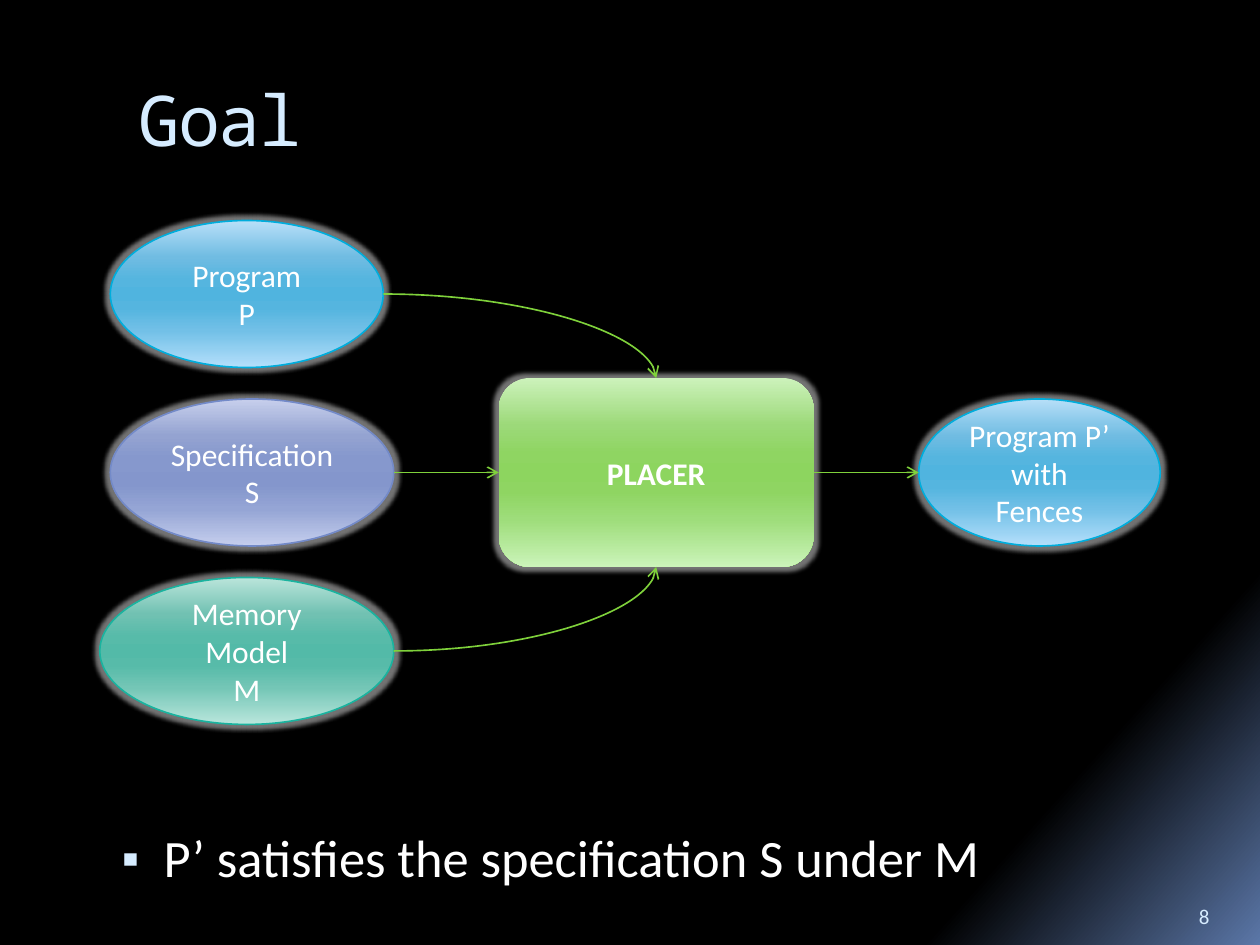
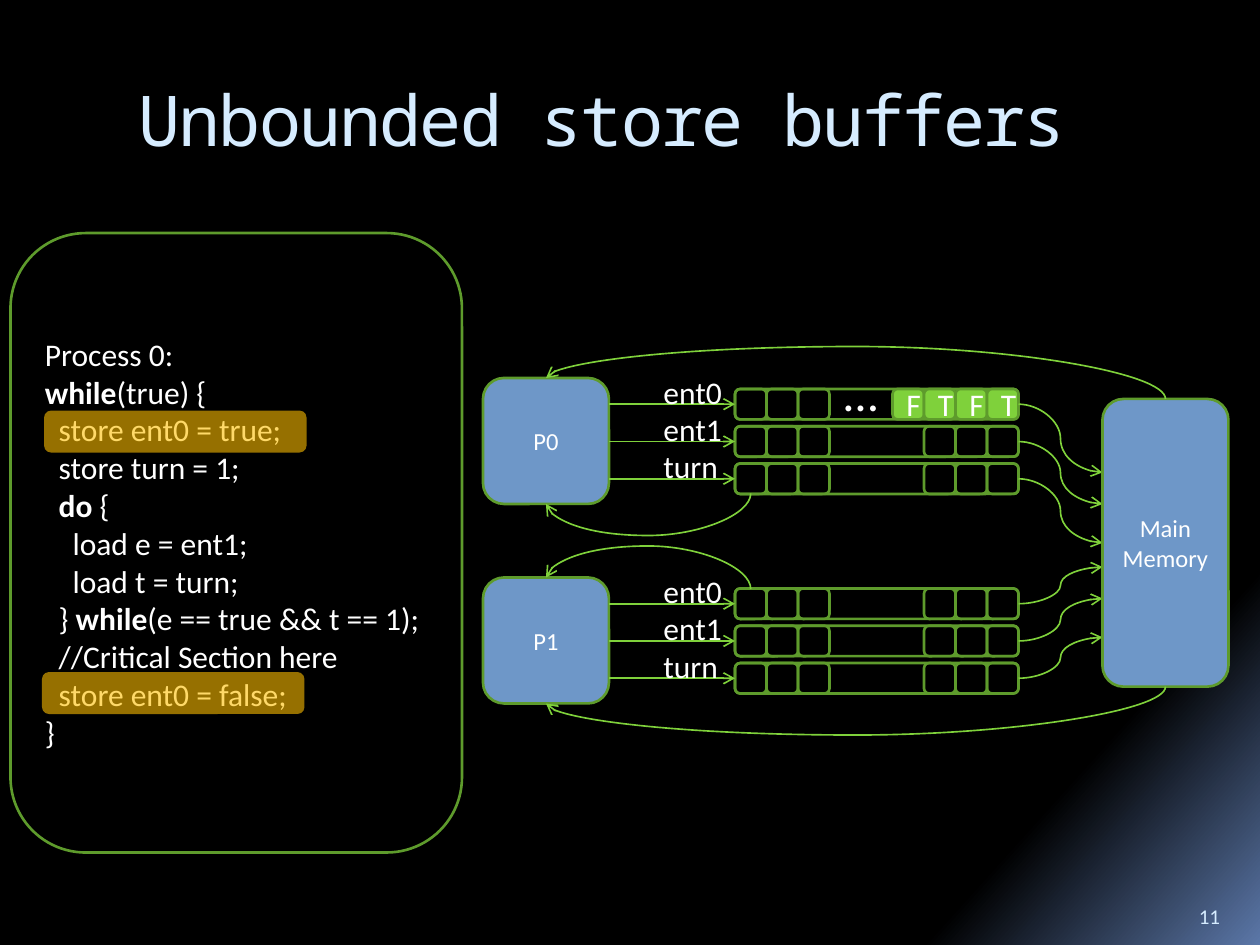
import lxml.etree
import pptx
import pptx.dml.color
import pptx.enum.shapes
import pptx.enum.text
import pptx.oxml.ns
import pptx.util

COLUMNS, ROWS = 120, 90
CELL = pptx.util.Inches(10) / COLUMNS

COLOURS = {
    "title": "D6ECFF", "text": "FFFFFF", "arrow": "7FD13B", "outline": "5E9B2C",
    "node": "6E97C8", "highlight": "FFC000", "glow": "FFFFFF",
    "blue": "00ADDC", "violet": "738AC8", "teal": "1AB39F",
}
SHEEN_POSITIONS = (0, 25, 40, 50, 60, 75, 100)
SHEENS = {
    "green": "CCF2BB 9CD979 8FD562 8DD55F 8FD562 9EDD7B CBF4B9",
    "blue": "B7DFF8 70BCE2 55B5DF 50B4DF 55B5DF 72C0E7 B4DFFB",
    "violet": "C7CFEC 94A3D1 8698CD 8496CC 8698CD 95A5D5 C5CEED",
    "teal": "BBE5DB 71C1B2 57BBA9 53BAA8 57BBA9 74C6B6 B9E6DC",
}
BACKDROP = ((65, "000000"), (84, "000000"), (100, "5B77A8"))

PT = pptx.util.Pt
FONTS = {
    "title": {"name": "Noto Sans Mono", "size": PT(40)},
    "body": {"name": "Calibri", "size": PT(30)},
    "dots": {"name": "Calibri", "size": PT(28)},
    "normal": {"name": "Calibri", "size": PT(18)},
    "node": {"name": "Calibri", "size": PT(14)},
    "number": {"name": "Calibri", "size": PT(12)},
}
ANCHOR = pptx.enum.text.MSO_ANCHOR
ALIGN = pptx.enum.text.PP_ALIGN
SHAPE = pptx.enum.shapes.MSO_SHAPE
CURVE = pptx.enum.shapes.MSO_CONNECTOR.CURVE
qn = pptx.oxml.ns.qn


def grid(*values):
    return [round(value * CELL) for value in values]


def rgb(name):
    return pptx.dml.color.RGBColor.from_string(COLOURS[name])


def apply(target, values):
    for name, value in values.items():
        setattr(target, name, value)


def add_xml(parent, tag, **attributes):
    return lxml.etree.SubElement(parent, qn(tag), attributes)


def add_colour(parent, value, alpha=None):
    colour = add_xml(parent, "a:srgbClr", val=value)
    if alpha:
        add_xml(colour, "a:alpha", val=str(alpha * 1000))


def fill_gradient(owner, fill, stops, angle):
    fill.gradient()
    gradient = next(owner._element.iter(qn("a:gradFill")))
    stop_list = gradient.find(qn("a:gsLst"))
    for stop in list(stop_list):
        stop_list.remove(stop)
    for position, value in stops:
        add_colour(add_xml(stop_list, "a:gs", pos=str(position * 1000)), value)
    gradient.find(qn("a:lin")).set("ang", str(angle * 60000))


def write(item, lines, font="normal", colour="text", align=None, **frame):
    """Fill a text frame, one paragraph a line; *stars* enclose bold words."""
    apply(item.text_frame, {"word_wrap": True, **frame})
    for number, line in enumerate(lines):
        paras = item.text_frame.paragraphs
        para = item.text_frame.add_paragraph() if number else paras[0]
        para.alignment = align
        for index, piece in enumerate(line.split("*")):
            if piece:
                span = para.add_run()
                span.text = piece
                apply(span.font, {**FONTS[font], "bold": index % 2 == 1})
                span.font.color.rgb = rgb(colour)
    return item


def add_text(page, box, lines, **style):
    return write(page.shapes.add_textbox(*grid(*box)), lines, **style)


def add_box(page, box, fill=None, line="outline", kind=SHAPE.ROUNDED_RECTANGLE, width=1.5):
    shape = page.shapes.add_shape(kind, *grid(*box))
    shape.shadow.inherit = False
    if fill:
        shape.fill.solid()
        shape.fill.fore_color.rgb = rgb(fill)
    else:
        shape.fill.background()
    if line:
        shape.line.color.rgb = rgb(line)
        shape.line.width = PT(width)
    else:
        shape.line.fill.background()
    return shape


def add_glossy(page, box, lines, sheen, line=None, kind=SHAPE.OVAL):
    """Add a shape with a gradient sheen and a soft glow."""
    shape = add_box(page, box, line=line, kind=kind, width=0.94)
    stops = zip(SHEEN_POSITIONS, SHEENS[sheen].split())
    fill_gradient(shape, shape.fill, stops, 90)
    effects = shape._element.spPr.find(qn("a:effectLst"))
    add_colour(add_xml(effects, "a:glow", rad="63500"), COLOURS["glow"], 45)
    write(shape, lines, align=ALIGN.CENTER)


def add_node(page, box, lines):
    write(add_box(page, box, "node"), lines, font="node", align=ALIGN.CENTER)


def add_arrow(page, start, end, preset="curvedConnector3"):
    arrow = page.shapes.add_connector(CURVE, *grid(*start, *end))
    arrow.line.color.rgb = rgb("arrow")
    arrow.line.width = PT(0.94)
    properties = arrow._element.spPr
    add_xml(properties.find(qn("a:ln")), "a:tailEnd", type="arrow")
    add_xml(properties, "a:effectLst")
    properties.find(qn("a:prstGeom")).set("prst", preset)
    return arrow


def add_arch(page, start, end, peak):
    """Add an arrow running leftwards that leaves and arrives vertically via row peak."""
    (x1, y1), (x2, y2) = start, end
    middle_x, middle_y = (x1 + x2) / 2, (y1 + y2) / 2
    length, height = x1 - x2, abs(y2 - y1)
    arrow = add_arrow(page, (middle_x - height / 2, middle_y - length / 2),
                      (middle_x + height / 2, middle_y + length / 2))
    frame = arrow._element.spPr.find(qn("a:xfrm"))
    upward = y2 < y1
    frame.set("rot", str((270 if upward else 90) * 60000))
    if upward:
        frame.set("flipV", "1")
    bend = round((peak - y1) / (y2 - y1) * 100000)
    guides = arrow._element.spPr.find(qn("a:prstGeom")).find(qn("a:avLst"))
    add_xml(guides, "a:gd", name="adj1", fmla=f"val {bend}")


def add_page(deck, title, number):
    page = deck.slides.add_slide(deck.slide_layouts[6])
    heading = add_text(page, (12, 6.7, 102, 12), [title], font="title", colour="title")
    for span in heading.text_frame.paragraphs[0].runs:
        span._r.get_or_add_rPr().set("spc", "-100")
    add_text(page, (113, 84.2, 6, 4.8), [number], font="number", colour="title",
             vertical_anchor=ANCHOR.BOTTOM)
    return page


def add_bullet(page, box, line):
    body = add_text(page, box, [line], font="body")
    para = body.text_frame.paragraphs[0]
    para.space_before = PT(7)
    properties = para._p.get_or_add_pPr()
    properties.set("marL", str(pptx.util.Inches(0.45)))
    properties.set("indent", str(pptx.util.Inches(-0.38)))
    add_colour(add_xml(properties, "a:buClr"), COLOURS["title"])
    add_xml(properties, "a:buSzPct", val="95000")
    add_xml(properties, "a:buFont", typeface=FONTS["title"]["name"])
    add_xml(properties, "a:buChar", char="▪")


def add_tool_flow(page, box):
    left, top, width, height = box
    middle = top + height / 2
    tool_left, tool_right = left + 38, left + 68
    tool_top, tool_bottom = middle - 9, middle + 9
    tool_centre = (tool_left + tool_right) / 2
    add_glossy(page, (tool_left, tool_top, 30, 18), ["*PLACER*"], "green",
               kind=SHAPE.ROUNDED_RECTANGLE)
    inputs = (
        (1, 26, ["Program", "P"], "blue", (tool_centre, tool_top), "curvedConnector2"),
        (1, 27, ["Specification S"], "violet", (tool_left, middle), "curvedConnector3"),
        (0, 28, ["Memory", "Model", "M"], "teal", (tool_centre, tool_bottom),
         "curvedConnector2"),
    )
    for index, (indent, oval_width, lines, colour, target, preset) in enumerate(inputs):
        oval_top = top + 17 * index
        add_glossy(page, (left + indent, oval_top, oval_width, 14), lines, colour, colour)
        add_arrow(page, (left + indent + oval_width, oval_top + 7), target, preset)
    add_glossy(page, (left + width - 23, middle - 7, 23, 14),
               ["Program P’", "with", "Fences"], "blue", "blue")
    add_arrow(page, (tool_right, middle), (left + width - 23, middle))


def add_code(page, box):
    left, top, width, height = box
    code = (
        (0, "Process 0:"), (0, "*while*(true) {"), (1, "store ent0 = true;"),
        (1, "store turn = 1;"), (1, "*do *{"), (2, "load e = ent1;"),
        (2, "load t = turn;"), (1, "} *while*(e == true && t == 1);"),
        (1, "//Critical Section here"), (1, "store ent0 = false;"), (0, "}"),
    )
    panel = write(add_box(page, box), [line for _, line in code], align=ALIGN.LEFT)
    for para, (depth, _) in zip(panel.text_frame.paragraphs, code):
        para._p.get_or_add_pPr().set("marL", str(round(pptx.util.Inches(0.11) * depth)))
    for x, y in ((3.2, 16.9), (3, 41.8)):
        mark = add_box(page, (left + x, top + y, 25, 4), "highlight", None)
        colour = next(mark._element.spPr.iter(qn("a:srgbClr")))
        add_xml(colour, "a:alpha", val="59000")


def add_buffer(page, box, stored):
    """Add a row of nine slots, of which the last ones may hold stored values."""
    left, top, width, height = box
    slot = width / 9
    add_box(page, box)
    for index in (0, 1, 2) if stored else (0, 1, 2, 6, 7, 8):
        add_box(page, (left + slot * index, top, slot, height))
    for index, value in enumerate(stored, 9 - len(stored)):
        cell = add_box(page, (left + slot * index, top, slot, height), "arrow")
        write(cell, [value], align=ALIGN.CENTER)
    if stored:
        add_text(page, (left + 9.2, top - 3.1, 5.8, 5), ["…"], font="dots", word_wrap=False)


def add_process(page, box, name, memory_rows, stored=""):
    left, top, width, height = box
    buffer_left, right = left + 24, left + width
    add_node(page, (left, top, height, height), [name])
    for index, (label, memory_row) in enumerate(zip(("ent0", "ent1", "turn"), memory_rows)):
        offset = 3.55 * index
        row = top + 2.5 + offset
        add_buffer(page, (buffer_left, row - 1.45, right - buffer_left, 2.9),
                   "" if index else stored)
        add_arrow(page, (left + height, row), (buffer_left, row))
        add_arrow(page, (right, row), (right + 8, memory_row))
        add_text(page, (left + 16, top - 1.1 + offset, 8, 4.8), [label], word_wrap=False)


def add_machine(page, box):
    left, top, width, height = box
    size, lower = 12, top + 19
    centre, buffer_exit = left + size / 2, left + 25.5
    memory_left, memory_top, memory_height = left + width - size, top + 2, 27.4
    memory_centre = memory_left + size / 2
    memory_rows = [memory_top + row for row in (7, 10, 13.7)]
    add_process(page, (left, top, 51, size), "P0", memory_rows, "FTFT")
    add_process(page, (left, lower, 51, size), "P1", [row + 9 for row in memory_rows])
    add_node(page, (memory_left, memory_top, size, memory_height), ["Main", "Memory"])
    add_arch(page, (memory_centre, memory_top), (centre, top), top - 3)
    add_arch(page, (memory_centre, memory_top + memory_height),
             (centre, lower + size), lower + size + 3)
    add_arch(page, (buffer_exit, top + 11), (centre, top + size), top + size + 3)
    add_arch(page, (buffer_exit, lower + 1.1), (centre, lower), lower - 3)


def main():
    deck = pptx.Presentation()
    deck.slide_width, deck.slide_height = grid(COLUMNS, ROWS)
    master = deck.slide_master
    fill_gradient(master, master.background.fill, BACKDROP, 42)

    goal = add_page(deck, "Goal", "8")
    add_bullet(goal, (9, 78, 107, 12), "P’ satisfies the specification S under M")
    add_tool_flow(goal, (9.5, 21, 101, 48))

    buffers = add_page(deck, "Unbounded store buffers", "11")
    add_machine(buffers, (46, 36, 71, 31))
    add_code(buffers, (1, 22.2, 43, 59))

    deck.save("out.pptx")


if __name__ == "__main__":
    main()
